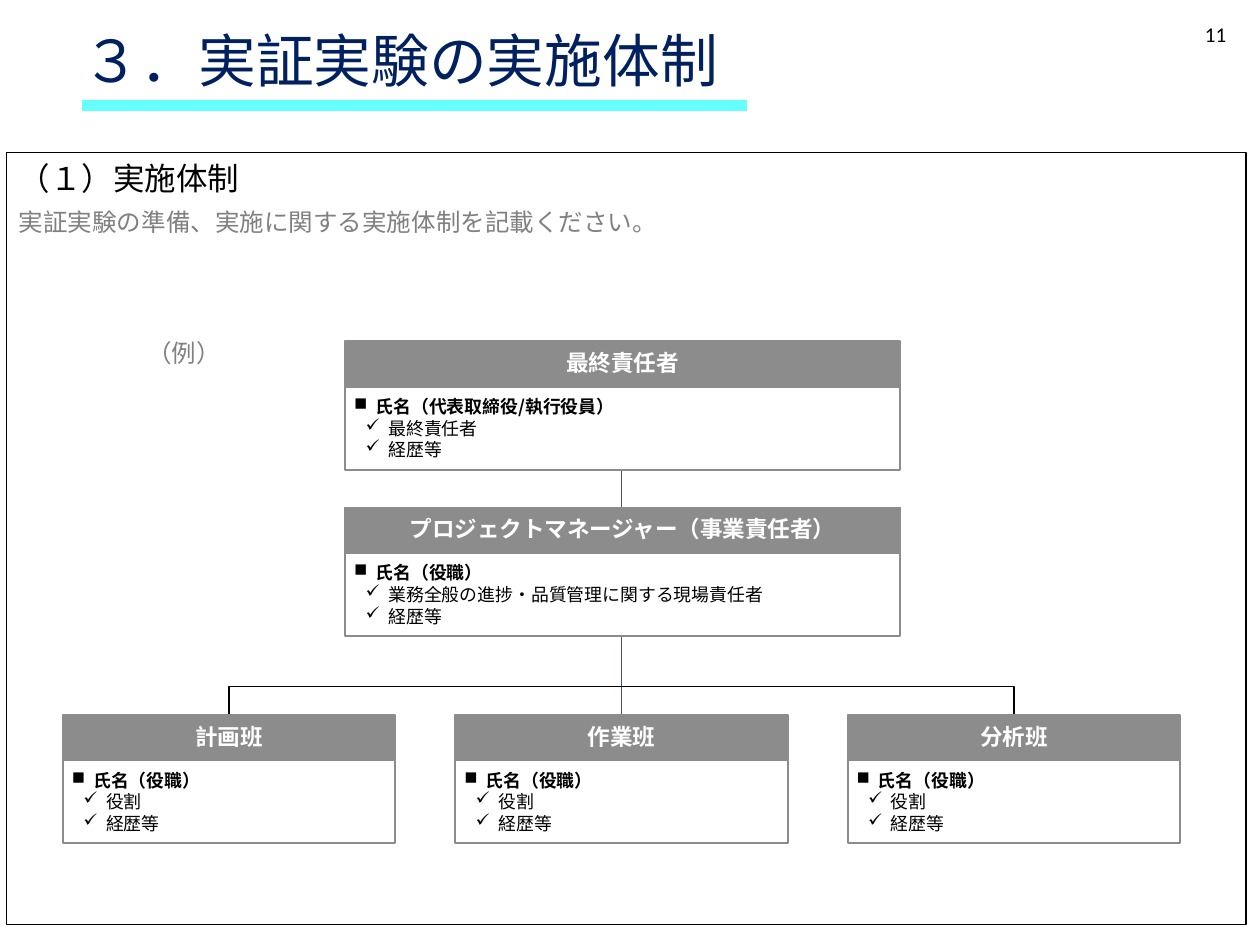
from lxml import etree
from pptx import Presentation
from pptx import util as u
from pptx.dml.color import RGBColor
from pptx.enum import shapes, text
from pptx.oxml.ns import qn

Cm, Pt = u.Cm, u.Pt
LATIN, JP = "Calibri", "Noto Sans CJK JP"
ALIGN = text.PP_ALIGN


def rgb(value):
    return RGBColor.from_string(value)


def add_text(tf, content, size=10.2, color="000000", font=JP, bold=False,
             align=ALIGN.LEFT, spacing=None, before=0, indent=0, hanging=0, bullet=None):
    """Append one formatted paragraph to a text frame."""
    p = tf.paragraphs[0] if not tf.paragraphs[0].runs else tf.add_paragraph()
    p.alignment, p.space_before = align, Pt(before)
    if spacing:
        p.line_spacing = spacing
    pPr = p._p.get_or_add_pPr()
    pPr.set("marL", str(Cm(indent)))
    pPr.set("indent", str(-Cm(hanging)))
    if bullet:
        clr = etree.SubElement(pPr, qn("a:buClr"))
        etree.SubElement(clr, qn("a:srgbClr"), val=color)
        etree.SubElement(pPr, qn("a:buChar"), char=bullet)
    r = p.add_run()
    r.text = content
    r.font.size, r.font.name, r.font.bold = Pt(size), font, bold
    r.font.color.rgb = rgb(color)
    etree.SubElement(r._r.get_or_add_rPr(), qn("a:ea"), typeface=font)


class Deck:
    GRAY = "8C8C8C"
    HEAD_H, BODY_H = 0.92, 1.67

    def __init__(self, width, height):
        self.prs = Presentation()
        self.prs.slide_width, self.prs.slide_height = Cm(width), Cm(height)
        self.s = self.prs.slides.add_slide(self.prs.slide_layouts[6])

    def frame(self, sp, inset=0.25, top=0.13, wrap=True, anchor=text.MSO_ANCHOR.TOP):
        tf = sp.text_frame
        tf.word_wrap, tf.vertical_anchor = wrap, anchor
        tf.margin_left = tf.margin_right = Cm(inset)
        tf.margin_top = tf.margin_bottom = Cm(top)
        return tf

    def label(self, x, y, w, h, content, top=0.13, **fmt):
        sp = self.s.shapes.add_textbox(Cm(x), Cm(y), Cm(w), Cm(h))
        add_text(self.frame(sp, top=top), content, **fmt)

    def outline(self, sp, fill, line, width):
        sp.shadow.inherit = False
        if fill:
            sp.fill.solid()
            sp.fill.fore_color.rgb = rgb(fill)
        else:
            sp.fill.background()
        sp.line.color.rgb, sp.line.width = rgb(line), Pt(width)

    def rect(self, x, y, w, h, fill=None, line=GRAY, width=1):
        sp = self.s.shapes.add_shape(shapes.MSO_SHAPE.RECTANGLE, Cm(x), Cm(y), Cm(w), Cm(h))
        self.outline(sp, fill, line, width)
        return sp

    def line(self, x1, y1, x2, y2, color, width):
        c = self.s.shapes.add_connector(shapes.MSO_CONNECTOR.STRAIGHT,
                                        Cm(x1), Cm(y1), Cm(x2), Cm(y2))
        c.line.color.rgb, c.line.width = rgb(color), Pt(width)
        etree.SubElement(c._element.spPr, qn("a:effectLst"))

    def polyline(self, points, color, width):
        start, *rest = [(Cm(x), Cm(y)) for x, y in points]
        builder = self.s.shapes.build_freeform(*start)
        builder.add_line_segments(rest, close=False)
        self.outline(builder.convert_to_shape(), None, color, width)

    def card(self, x, y, w, title, name, details):
        """Role box: gray heading over a bulleted body."""
        body = self.rect(x, y + self.HEAD_H, w, self.BODY_H, "FFFFFF")
        tf = self.frame(body, 0.18, 0.18)
        add_text(tf, name, bold=True, bullet="■", indent=0.43, hanging=0.43, spacing=Pt(12.3))
        for detail in details:
            add_text(tf, detail, bullet="✓", indent=0.69, hanging=0.46, spacing=Pt(12.3))
        head = self.rect(x, y, w, self.HEAD_H, self.GRAY)
        tf = self.frame(head, 0.18, 0.18, wrap=False, anchor=text.MSO_ANCHOR.MIDDLE)
        add_text(tf, title, size=12.9, color="FFFFFF", bold=True,
                 align=ALIGN.CENTER, spacing=0.95)


def main():
    d = Deck(25.4, 19.05)

    # Title, underline and page number
    d.label(1.42, 0.66, 21.87, 2.13, "３．実証実験の実施体制", top=0,
            size=33, color="002060", font=LATIN, spacing=0.9)
    d.line(1.65, 2.13, 15.06, 2.13, "66FFFF", 6)
    d.label(19.25, 0.3, 5.72, 1.02, "11", size=12, font=LATIN, align=ALIGN.RIGHT)

    # Organisation chart: connecting lines
    team_x, team_y, team_w, team_pitch = 1.27, 14.41, 6.7, 7.91
    centers = [team_x + i * team_pitch + team_w / 2 for i in range(3)]
    left, middle, right = centers
    d.line(middle, 9.47, middle, team_y, "44546A", 1)
    d.polyline([(left, team_y), (left, 13.84), (right, 13.84), (right, team_y)], "000000", 1)

    # Organisation chart: managers, then teams
    managers = [
        ("最終責任者", "氏名（代表取締役/執行役員）", "最終責任者"),
        ("プロジェクトマネージャー（事業責任者）", "氏名（役職）",
         "業務全般の進捗・品質管理に関する現場責任者"),
    ]
    for i, (title, name, duty) in enumerate(managers):
        d.card(6.96, 6.88 + i * 3.35, 11.18, title, name, [duty, "経歴等"])
    for center, title in zip(centers, ["計画班", "作業班", "分析班"]):
        d.card(center - team_w / 2, team_y, team_w, title, "氏名（役職）", ["役割", "経歴等"])

    # Section frame with its instructions
    tf = d.frame(d.rect(0.13, 3.07, 24.99, 15.57, line="000000", width=0.75))
    add_text(tf, "（１）実施体制", size=18, before=6)
    add_text(tf, "実証実験の準備、実施に関する実施体制を記載ください。",
             size=14, color="808080", before=6)
    add_text(tf, "（例）", size=14, color="808080", before=58, indent=2.59)

    d.prs.save("out.pptx")


if __name__ == "__main__":
    main()
